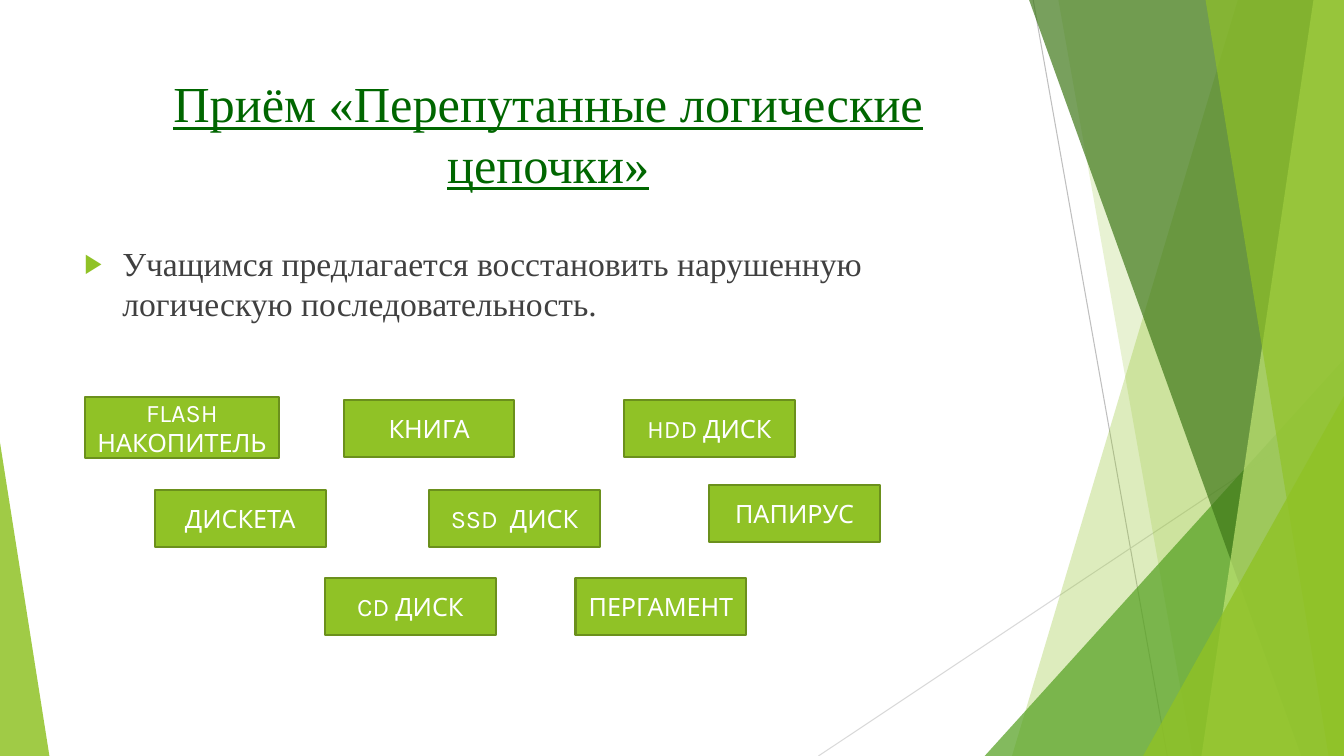
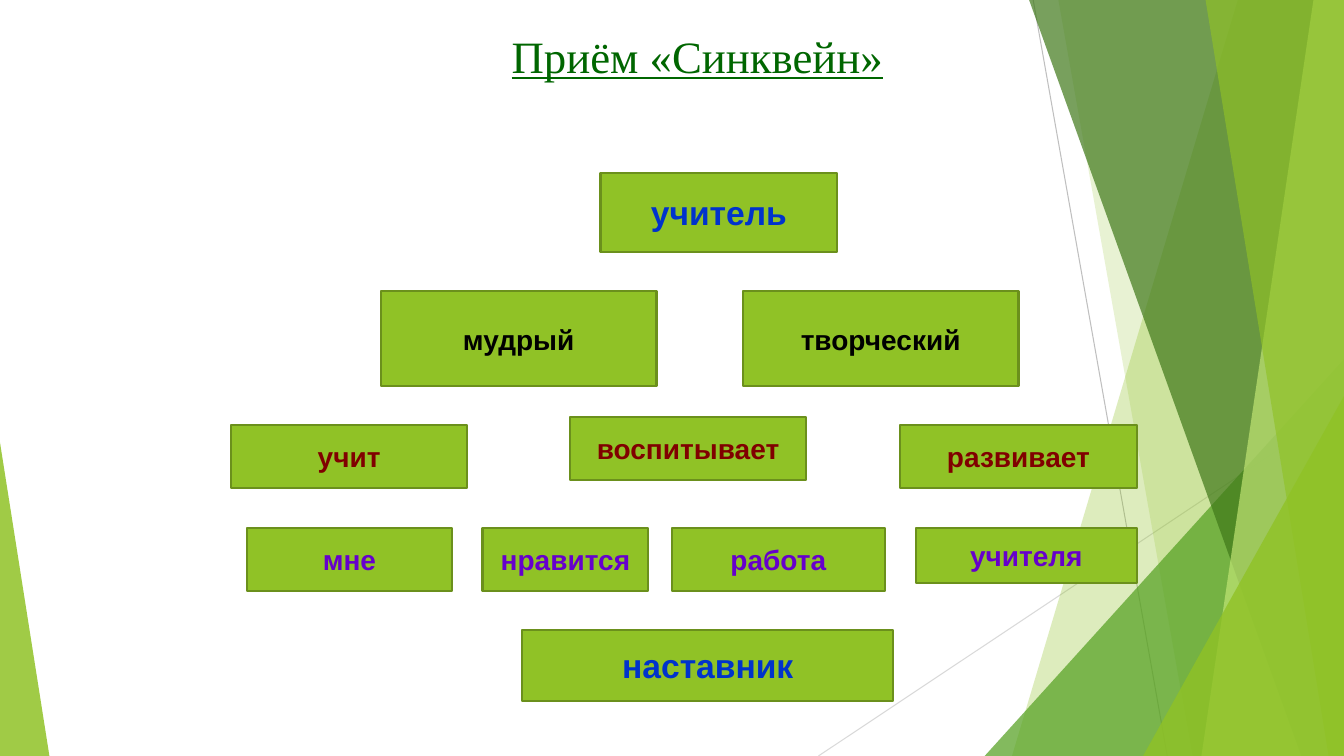
"""Build two slides on classroom techniques over a shared faceted green backdrop."""
from lxml.etree import SubElement
from pptx import Presentation
from pptx.dml.color import RGBColor
from pptx.enum.shapes import MSO_CONNECTOR, MSO_SHAPE
from pptx.enum.text import MSO_ANCHOR, PP_ALIGN
from pptx.oxml.ns import qn
from pptx.util import Pt

LIME = RGBColor(0x90, 0xC2, 0x26)
PALE_LIME = RGBColor(0xC0, 0xE4, 0x74)
LEAF = RGBColor(0x54, 0xA0, 0x21)
FOREST = RGBColor(0x3F, 0x78, 0x19)
OLIVE = RGBColor(0x6B, 0x90, 0x1C)
TITLE_GREEN = RGBColor(0x00, 0x66, 0x00)
BODY_GRAY = RGBColor(0x40, 0x40, 0x40)
LINE_GRAY = RGBColor(0xBF, 0xBF, 0xBF)
LIGHT_GRAY = RGBColor(0xD9, 0xD9, 0xD9)
WHITE = RGBColor(0xFF, 0xFF, 0xFF)
BLACK = RGBColor(0x00, 0x00, 0x00)
BLUE = RGBColor(0x00, 0x33, 0xCC)
MAROON = RGBColor(0x80, 0x00, 0x00)
VIOLET = RGBColor(0x66, 0x00, 0xCC)
SERIF = "Times New Roman"
WIDTH, HEIGHT = 960, 540

RULES = [
    (738, 0, 833.8, HEIGHT, LINE_GRAY),
    (WIDTH, 290, 584.6, HEIGHT, LIGHT_GRAY),
]
FACETS = [
    ("band", 884.2, 722.9, LIME, 30),
    ("band", 756, 851.8, LIME, 20),
    ("triangle", 703.4, 256.6, LEAF, 72),
    ("band", 735.1, 929.5, FOREST, 70),
    ("band", 938.2, 858.2, PALE_LIME, 70),
    ("band", 861.1, 949, LIME, 65),
    ("triangle", 816.5, 283, LIME, 80),
    ("triangle", 0, 316.1, LIME, 85),
]


def write(box, text, font, size, color, bold=False, underline=False, align=PP_ALIGN.CENTER):
    """Put one styled run into a shape and return its paragraph."""
    box.text_frame.word_wrap = True
    para = box.text_frame.paragraphs[0]
    para.alignment = align
    span = para.add_run()
    span.text = text
    span.font.name = font
    span.font.size = Pt(size)
    span.font.bold = bold
    span.font.underline = underline
    span.font.color.rgb = color
    return para


def add_card(page, left, top, width, height, text, font, size, color, bold):
    """Add a lime card with centred text."""
    card = page.shapes.add_shape(MSO_SHAPE.RECTANGLE, Pt(left), Pt(top), Pt(width), Pt(height))
    card.shadow.inherit = False
    card.fill.solid()
    card.fill.fore_color.rgb = LIME
    card.line.color.rgb = OLIVE
    card.line.width = Pt(1.5)
    card.text_frame.vertical_anchor = MSO_ANCHOR.MIDDLE
    write(card, text, font, size, color, bold)


deck = Presentation()
deck.slide_width = Pt(WIDTH)
deck.slide_height = Pt(HEIGHT)

pages = []
for title, size, left, top, width, height in [
    ("Приём «Перепутанные логические цепочки»", 36, 53.3, 48.2, 676.8, 103.7),
    ("Приём «Синквейн»", 32, 156.2, 16.6, 684, 66.2),
]:
    page = deck.slides.add_slide(deck.slide_layouts[6])
    pages.append(page)

    for x1, y1, x2, y2, color in RULES:
        rule = page.shapes.add_connector(MSO_CONNECTOR.STRAIGHT, Pt(x1), Pt(y1), Pt(x2), Pt(y2))
        rule.line.color.rgb = color
        rule.line.width = Pt(0.75)
        SubElement(rule._element.spPr, qn("a:effectLst"))

    for kind, first, second, color, opacity in FACETS:
        if kind == "band":
            outline = page.shapes.build_freeform(Pt(first), 0)
            outline.add_line_segments([(Pt(WIDTH), 0), (Pt(WIDTH), Pt(HEIGHT)), (Pt(second), Pt(HEIGHT))])
            facet = outline.convert_to_shape()
        else:
            base = WIDTH - first if first else 35.3
            facet = page.shapes.add_shape(
                MSO_SHAPE.ISOSCELES_TRIANGLE, Pt(first), Pt(second), Pt(base), Pt(HEIGHT - second))
            facet.adjustments[0] = 1 if first else 0
        facet.shadow.inherit = False
        facet.line.fill.background()
        facet.fill.solid()
        facet.fill.fore_color.rgb = color
        tint = facet._element.spPr.find(qn("a:solidFill"))[0]
        SubElement(tint, qn("a:alpha"), val=str(opacity * 1000))

    heading = page.shapes.add_textbox(Pt(left), Pt(top), Pt(width), Pt(height))
    write(heading, title, SERIF, size, TITLE_GREEN, underline=True)

chains, cinquain = pages

body = chains.shapes.add_textbox(Pt(53.3), Pt(169.9), Pt(676.8), Pt(305.3))
para = write(
    body, "Учащимся предлагается восстановить нарушенную логическую последовательность.",
    SERIF, 24, BODY_GRAY, align=PP_ALIGN.LEFT)
para.space_before = Pt(10)
properties = para._p.get_or_add_pPr()
properties.set("marL", str(Pt(27)))
properties.set("indent", str(Pt(-27)))
bullet_color = SubElement(properties, qn("a:buClr"))
SubElement(bullet_color, qn("a:srgbClr"), val=str(LIME))
SubElement(properties, qn("a:buSzPct"), val="80000")
SubElement(properties, qn("a:buFont"), typeface="Arial")
SubElement(properties, qn("a:buChar"), char="▶")

for text, left, top, width, height in [
    ("FLASH НАКОПИТЕЛЬ", 60.5, 283.7, 139, 43.2),
    ("КНИГА", 245.5, 285.5, 122, 41),
    ("HDD ДИСК", 445.7, 285.5, 122, 41),
    ("ДИСКЕТА", 110.6, 350, 122, 41),
    ("SSD  ДИСК", 306.5, 350, 122, 41),
    ("ПАПИРУС", 506.6, 346.5, 122, 41),
    ("CD ДИСК", 232.2, 412.7, 122, 41),
    ("ПЕРГАМЕНТ", 411.1, 412.7, 122, 41),
]:
    add_card(chains, left, top, width, height, text, "Karla", 18, WHITE, False)

for size, color, cards in [
    (24, BLUE, [("учитель", 429, 123.5, 169, 56.5)]),
    (20, BLACK, [("мудрый", 272, 208, 197, 68), ("творческий", 530.6, 208, 197, 68)]),
    (20, MAROON, [
        ("учит", 164.9, 303.6, 169, 45),
        ("воспитывает", 407, 298, 169, 45),
        ("развивает", 643, 303.6, 169, 45),
    ]),
    (20, VIOLET, [
        ("мне", 176.4, 377, 146.5, 45),
        ("нравится", 344.7, 377, 118.5, 45),
        ("работа", 480, 377, 152, 45),
        ("учителя", 654.3, 377, 157.7, 39.5),
    ]),
    (24, BLUE, [("наставник", 373, 450, 265, 50.5)]),
]:
    for text, left, top, width, height in cards:
        add_card(cinquain, left, top, width, height, text, "Arial", size, color, True)

deck.save("out.pptx")
